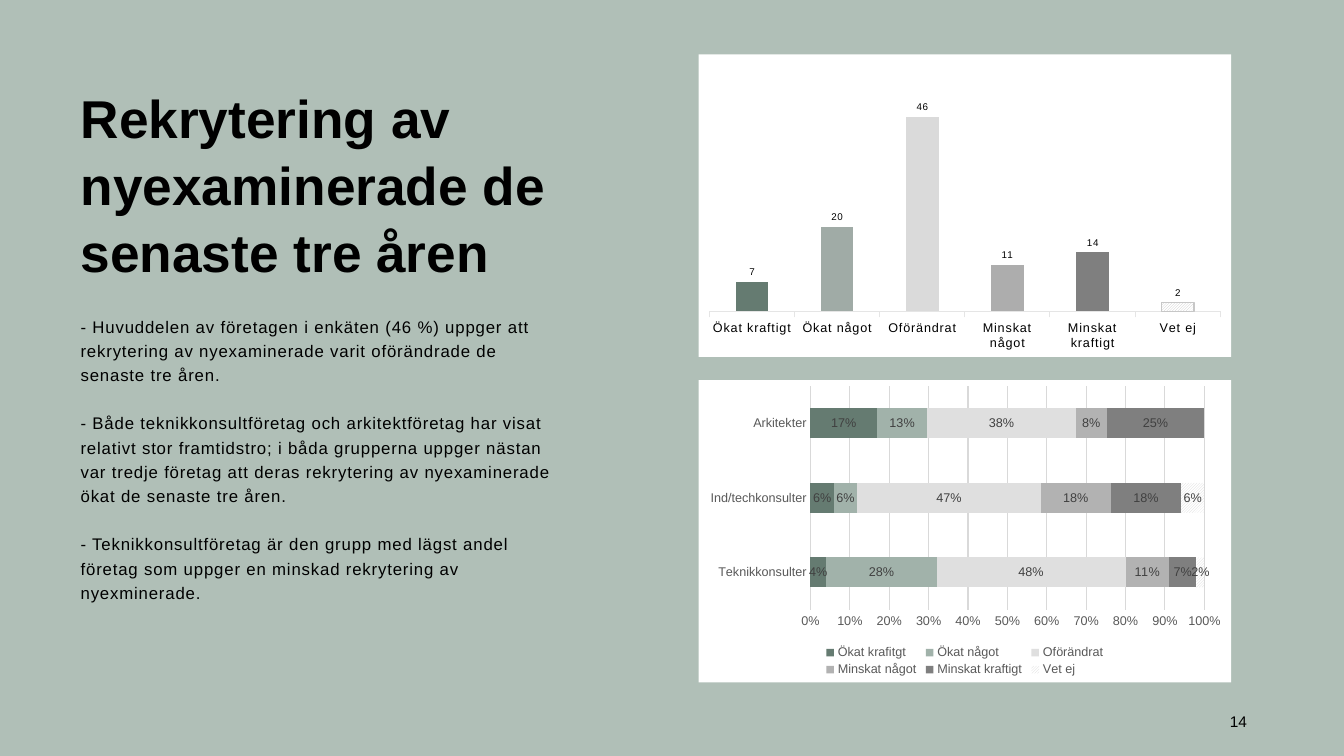
from pptx import Presentation
from pptx.chart.data import CategoryChartData
from pptx.dml.color import RGBColor
from pptx.enum.chart import XL_CHART_TYPE as Kind, XL_LABEL_POSITION as Pos
from pptx.enum.chart import XL_LEGEND_POSITION as Side, XL_TICK_LABEL_POSITION as Tick
from pptx.enum.chart import XL_TICK_MARK as Mark
from pptx.enum.dml import MSO_PATTERN as Pattern
from pptx.enum.text import MSO_ANCHOR as Anchor
from pptx.oxml import parse_xml
from pptx.oxml.ns import nsdecls, qn
from pptx.util import Inches, Pt

TITLE = "Rekrytering av nyexaminerade de senaste tre åren"
NOTES = [
    "- Huvuddelen av företagen i enkäten (46 %) uppger att rekrytering av "
    "nyexaminerade varit oförändrade de senaste tre åren.",
    "- Både teknikkonsultföretag och arkitektföretag har visat relativt stor "
    "framtidstro; i båda grupperna uppger nästan var tredje företag att deras "
    "rekrytering av nyexaminerade ökat de senaste tre åren.",
    "- Teknikkonsultföretag är den grupp med lägst andel företag som uppger en "
    "minskad rekrytering av nyexminerade.",
]
ANSWERS = ["Ökat kraftigt", "Ökat något", "Oförändrat",
           "Minskat något", "Minskat kraftigt", "Vet ej"]
TOTALS = [7, 20, 46, 11, 14, 2]
TONES = ["657B71", "A0ABA6", "DADADA", "ADADAD", "7F7F7F"]
GROUPS = ["Teknikkonsulter", "Ind/techkonsulter", "Arkitekter"]
SHARES = [
    ("Ökat krafitgt", [0.04, 0.06, 0.17], "657B71"),
    ("Ökat något", [0.28, 0.06, 0.13], "A1B2AA"),
    ("Oförändrat", [0.48, 0.47, 0.38], "DFDFDF"),
    ("Minskat något", [0.11, 0.18, 0.08], "B2B2B2"),
    ("Minskat kraftigt", [0.07, 0.18, 0.25], "7F7F7F"),
    ("Vet ej", [0.02, 0.06, 0], None),
]


def color(code):
    return RGBColor.from_string(code)


def paint(fill, code):
    fill.solid()
    fill.fore_color.rgb = color(code)


def hatch(fill, code):
    fill.patterned()
    fill.pattern = Pattern.DARK_UPWARD_DIAGONAL
    fill.fore_color.rgb = color(code)
    fill.back_color.rgb = color("FFFFFF")


def style(font, size, code="000000", bold=False):
    font.name = "Arial"
    font.size = Pt(size)
    font.bold = bold
    font.color.rgb = color(code)


def rule(line, code):
    line.width = Pt(0.75)
    line.color.rgb = color(code)


def track(element):
    for props in element.iter(qn("a:defRPr")):
        props.set("spc", "60")


def add_text(slide, spot, texts, size, bold=False, anchor=Anchor.TOP,
             pad=(0, 0), pitch=1.0, gap=0):
    box = slide.shapes.add_textbox(*map(Inches, spot))
    frame = box.text_frame
    frame.word_wrap = True
    frame.vertical_anchor = anchor
    frame.margin_left = frame.margin_right = Inches(pad[0])
    frame.margin_top = frame.margin_bottom = Inches(pad[1])
    for i, text in enumerate(texts):
        para = frame.paragraphs[0] if i == 0 else frame.add_paragraph()
        para.text = text
        para.line_spacing = pitch
        if i:
            para.space_before = Pt(gap)
        style(para.font, size, bold=bold)
    return box


def layout(*spot):
    sizes = "".join(f'<c:{key} val="{val}"/>' for key, val in zip("xywh", spot))
    return (f'<c:layout {nsdecls("c")}><c:manualLayout>%s<c:xMode val="edge"/>'
            f'<c:yMode val="edge"/>{sizes}</c:manualLayout></c:layout>')


def add_chart(slide, kind, top, cats, rows, plot):
    data = CategoryChartData()
    data.categories = cats
    for name, vals in rows:
        data.add_series(name, vals)
    spot = map(Inches, (6.93, top, 5.28, 3))
    chart = slide.shapes.add_chart(kind, *spot, data).chart
    chart.has_title = False
    chart.has_legend = False
    style(chart.font, 10)
    chart.element.find(qn("c:chart")).addnext(parse_xml(
        f'<c:spPr {nsdecls("c", "a")}><a:solidFill><a:srgbClr val="FFFFFF"/>'
        '</a:solidFill><a:ln><a:noFill/></a:ln></c:spPr>'))
    area = next(chart.element.iter(qn("c:plotArea")))
    for old in area.findall(qn("c:layout")):
        area.remove(old)
    inner = '<c:layoutTarget val="inner"/>'
    area.insert(0, parse_xml(layout(*plot) % inner))
    chart.plots[0].vary_by_categories = False
    return chart


def add_labels(owner, size, code, form, pos):
    labels = owner.data_labels
    labels.show_value = True
    labels.number_format = form
    labels.number_format_is_linked = False
    labels.position = pos
    style(labels.font, size, code)


def add_columns(slide):
    chart = add_chart(slide, Kind.COLUMN_CLUSTERED, 0.54, ANSWERS,
                      [("Series 1", TOTALS)], (0.02, 0.14, 0.96, 0.71))
    plot = chart.plots[0]
    plot.gap_width, plot.overlap = 162, -30
    series = plot.series[0]
    paint(series.format.fill, TONES[0])
    for i, tone in enumerate(TONES):
        paint(series.points[i].format.fill, tone)
    last = series.points[len(TONES)].format
    hatch(last.fill, "C7C7C7")
    rule(last.line, "C7C7C7")
    add_labels(series, 7, "000000", "#,##0;#,##0", Pos.OUTSIDE_END)
    axis = chart.category_axis
    axis.tick_label_position = Tick.LOW
    axis.major_tick_mark = Mark.OUTSIDE
    style(axis.tick_labels.font, 9)
    rule(axis.format.line, "E5E5E5")
    scale = chart.value_axis
    scale.minimum_scale, scale.maximum_scale = 0, 50.74
    scale.has_major_gridlines = False
    scale.visible = False
    track(chart.element)


def add_bars(slide):
    chart = add_chart(slide, Kind.BAR_STACKED_100, 3.77, GROUPS,
                      [share[:2] for share in SHARES], (0.21, 0.02, 0.74, 0.74))
    plot = chart.plots[0]
    plot.gap_width, plot.overlap = 150, 100
    for series, (_, _, tone) in zip(plot.series, SHARES):
        if tone:
            paint(series.format.fill, tone)
        else:
            hatch(series.format.fill, "D9D9D9")
        add_labels(series, 9, "404040", "0%;;", Pos.CENTER)
    for axis in (chart.category_axis, chart.value_axis):
        axis.major_tick_mark = Mark.NONE
        style(axis.tick_labels.font, 9, "595959")
    rule(chart.category_axis.format.line, "D9D9D9")
    scale = chart.value_axis
    scale.format.line.fill.background()
    rule(scale.major_gridlines.format.line, "D9D9D9")
    scale.major_unit = 0.1
    scale.tick_labels.number_format = "0%"
    scale.tick_labels.number_format_is_linked = False
    chart.has_legend = True
    legend = chart.legend
    legend.position = Side.BOTTOM
    legend.include_in_layout = False
    style(legend.font, 9, "595959")
    root = next(chart.element.iter(qn("c:legend")))
    for old in root.findall(qn("c:layout")):
        root.remove(old)
    root.find(qn("c:legendPos")).addnext(
        parse_xml(layout(0.23, 0.87, 0.54, 0.12) % ""))


def main():
    deck = Presentation()
    deck.slide_width, deck.slide_height = Inches(13.33), Inches(7.5)
    slide = deck.slides.add_slide(deck.slide_layouts[6])
    paint(slide.background.fill, "B0BFB7")
    add_text(slide, (0.8, 0.48, 5.86, 2.67), [TITLE], 38, True,
             Anchor.MIDDLE, (0, 0.09), 1.05)
    notes = add_text(slide, (0.8, 3.1, 4.8, 3.81), NOTES, 12, pitch=1.2, gap=17.3)
    track(notes.element)
    add_text(slide, (12.1, 6.9, 0.58, 0.51), ["14"], 11,
             anchor=Anchor.MIDDLE, pad=(0.1, 0.05))
    add_columns(slide)
    add_bars(slide)
    deck.save("out.pptx")


if __name__ == "__main__":
    main()
